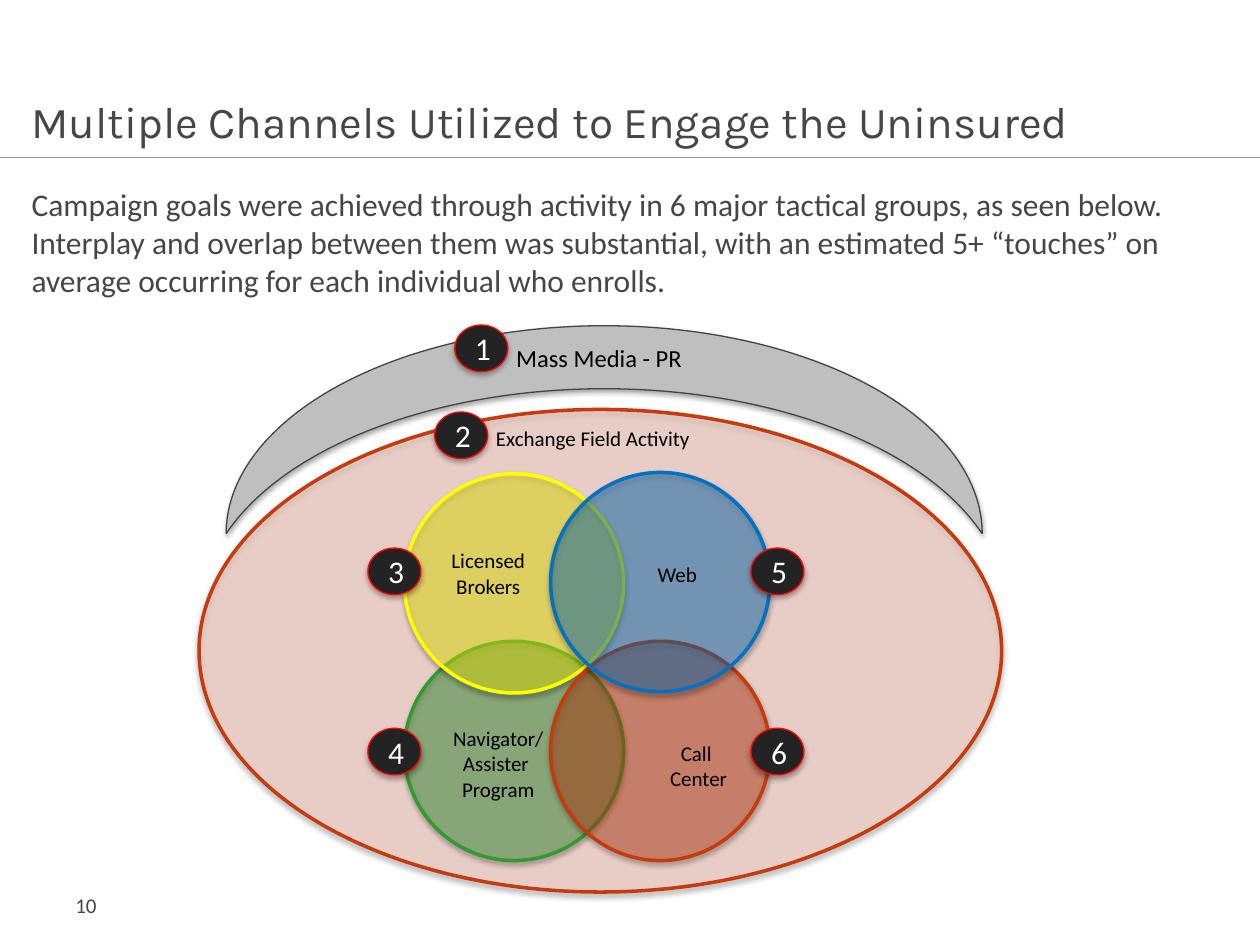
from dataclasses import dataclass

from lxml.etree import SubElement
from pptx import Presentation
from pptx.dml.color import RGBColor
from pptx.enum.shapes import MSO_CONNECTOR as CONNECTOR, MSO_SHAPE as SHAPE
from pptx.enum.text import MSO_ANCHOR as ANCHOR, MSO_AUTO_SIZE as AUTO, PP_ALIGN as ALIGN
from pptx.oxml import parse_xml
from pptx.oxml.ns import nsdecls, qn
from pptx.util import Inches, Pt


@dataclass(frozen=True)
class Theme:
    heading_font: str = "Karla"
    body_font: str = "Calibri"
    text: str = "464646"
    black: str = "000000"
    white: str = "FFFFFF"
    rule: str = "959595"
    media: str = "BFBFBF"
    media_line: str = "444444"
    field: str = "F9BDA9"
    rust: str = "C53B0E"
    green: str = "339933"
    yellow: str = "FFFF00"
    blue: str = "0070C0"
    badge: str = "232323"
    badge_line: str = "FF0000"
    title_size: float = 25.2
    body_size: float = 18
    media_size: float = 14
    label_size: float = 12
    alpha: int = 42


theme = Theme()


def add_text(frame, lines, size, color, font=theme.body_font, align=None):
    for i, line in enumerate(lines):
        paragraph = frame.paragraphs[0] if i == 0 else frame.add_paragraph()
        paragraph.alignment = align
        run = paragraph.add_run()
        run.text = line
        run.font.name, run.font.size = font, Pt(size)
        run.font.color.rgb = RGBColor.from_string(color)


def add_figure(kind, box, fill, line, width, alpha=None):
    figure = slide.shapes.add_shape(kind, *map(Inches, box))
    figure.fill.solid()
    figure.fill.fore_color.rgb = RGBColor.from_string(fill)
    figure.line.color.rgb = RGBColor.from_string(line)
    figure.line.width = Pt(width)
    properties = figure._element.spPr
    if alpha:
        color = properties.find(qn("a:solidFill"))[0]
        SubElement(color, qn("a:alpha"), val=str(alpha * 1000))
    # Soft shadow straight below the shape
    figure.shadow.inherit = False
    properties.find(qn("a:effectLst")).append(parse_xml(
        f'<a:outerShdw {nsdecls("a")} blurRad="40000" dist="23000" dir="5400000" '
        'rotWithShape="0"><a:srgbClr val="000000"><a:alpha val="35000"/>'
        '</a:srgbClr></a:outerShdw>'))
    return figure


prs = Presentation()
prs.slide_width, prs.slide_height = Inches(10), Inches(7.5)
slide = prs.slides.add_slide(prs.slide_layouts[1])

# Title and introduction
title, intro = slide.shapes.title, slide.placeholders[1]
for holder, box, anchor in [(title, (0.25, 0.3, 9.33, 0.87), ANCHOR.BOTTOM),
                            (intro, (0.25, 1.47, 9.5, 4.95), ANCHOR.TOP)]:
    holder.left, holder.top, holder.width, holder.height = map(Inches, box)
    frame = holder.text_frame
    frame.margin_left = frame.margin_right = frame.margin_top = frame.margin_bottom = 0
    frame.vertical_anchor = anchor
    frame.auto_size = AUTO.NONE
    frame.word_wrap = True
add_text(title.text_frame, ["Multiple Channels Utilized to Engage the Uninsured"],
         theme.title_size, theme.text, theme.heading_font, ALIGN.LEFT)

intro_format = intro.text_frame.paragraphs[0]._p.get_or_add_pPr()
intro_format.set("marL", "0")
intro_format.set("indent", "0")
SubElement(intro_format, qn("a:buNone"))
intro.text_frame.paragraphs[0].space_before = Pt(0)
add_text(intro.text_frame, [
    "Campaign goals were achieved through activity in 6 major tactical groups, as seen "
    "below. Interplay and overlap between them was substantial, with an estimated 5+ "
    "“touches” on average occurring for each individual who enrolls."],
    theme.body_size, theme.text, align=ALIGN.LEFT)

# Rule under the title
rule = slide.shapes.add_connector(CONNECTOR.STRAIGHT, 0, Inches(1.25), Inches(10), Inches(1.25))
rule.line.color.rgb = RGBColor.from_string(theme.rule)
rule.line.width = Pt(0.5)
SubElement(rule._element.spPr, qn("a:effectLst"))

# Page number
page = slide.shapes.add_textbox(Inches(0.5), Inches(6.98), Inches(2.33), Inches(0.4))
page.text_frame.vertical_anchor = ANCHOR.MIDDLE
page.text_frame.word_wrap = True
add_text(page.text_frame, ["10"], theme.label_size, theme.text)

# Field activity, the channel circles and the mass media arc
add_figure(SHAPE.OVAL, (1.58, 3.25, 6.37, 3.83), theme.field, theme.rust, 2, theme.alpha)
diameter = 1.74
for left, top, color in [(3.21, 5.09, theme.green), (3.21, 3.76, theme.yellow),
                         (4.37, 5.09, theme.rust), (4.37, 3.75, theme.blue)]:
    add_figure(SHAPE.OVAL, (left, top, diameter, diameter), color, color, 2, theme.alpha)
media_arc = add_figure(SHAPE.MOON, (3.97, 0.41, 1.65, 6), theme.media, theme.media_line, 0.75)
media_arc.rotation = 90
media_arc.adjustments[0] = 0.303

# Channel labels
labels = [
    (["Mass Media - PR"], (3.92, 2.67, 1.67, 0.34), theme.media_size),
    (["Exchange Field Activity"], (3.71, 3.33, 1.99, 0.3), theme.label_size),
    (["Licensed Brokers"], (3.29, 4.3, 1.17, 0.5), theme.label_size),
    (["Navigator/", "Assister ", "Program"], (3.37, 5.71, 1.17, 0.71), theme.label_size),
    (["Web"], (4.79, 4.41, 1.17, 0.3), theme.label_size),
    (["Call ", "Center"], (4.96, 5.83, 1.17, 0.5), theme.label_size),
]
for lines, box, size in labels:
    label = slide.shapes.add_textbox(*map(Inches, box))
    label.text_frame.word_wrap = True
    label.text_frame.auto_size = AUTO.SHAPE_TO_FIT_TEXT
    add_text(label.text_frame, lines, size, theme.black, align=ALIGN.CENTER)

# Numbered badges
badge_spots = [(3.61, 2.58), (3.45, 3.27), (2.92, 4.35), (2.92, 5.78), (5.96, 4.35), (5.96, 5.78)]
for number, (left, top) in enumerate(badge_spots, start=1):
    badge = add_figure(SHAPE.OVAL, (left, top, 0.42, 0.37), theme.badge, theme.badge_line, 0.75)
    badge.text_frame.vertical_anchor = ANCHOR.MIDDLE
    add_text(badge.text_frame, [str(number)], theme.body_size, theme.white, align=ALIGN.CENTER)

prs.save("out.pptx")
